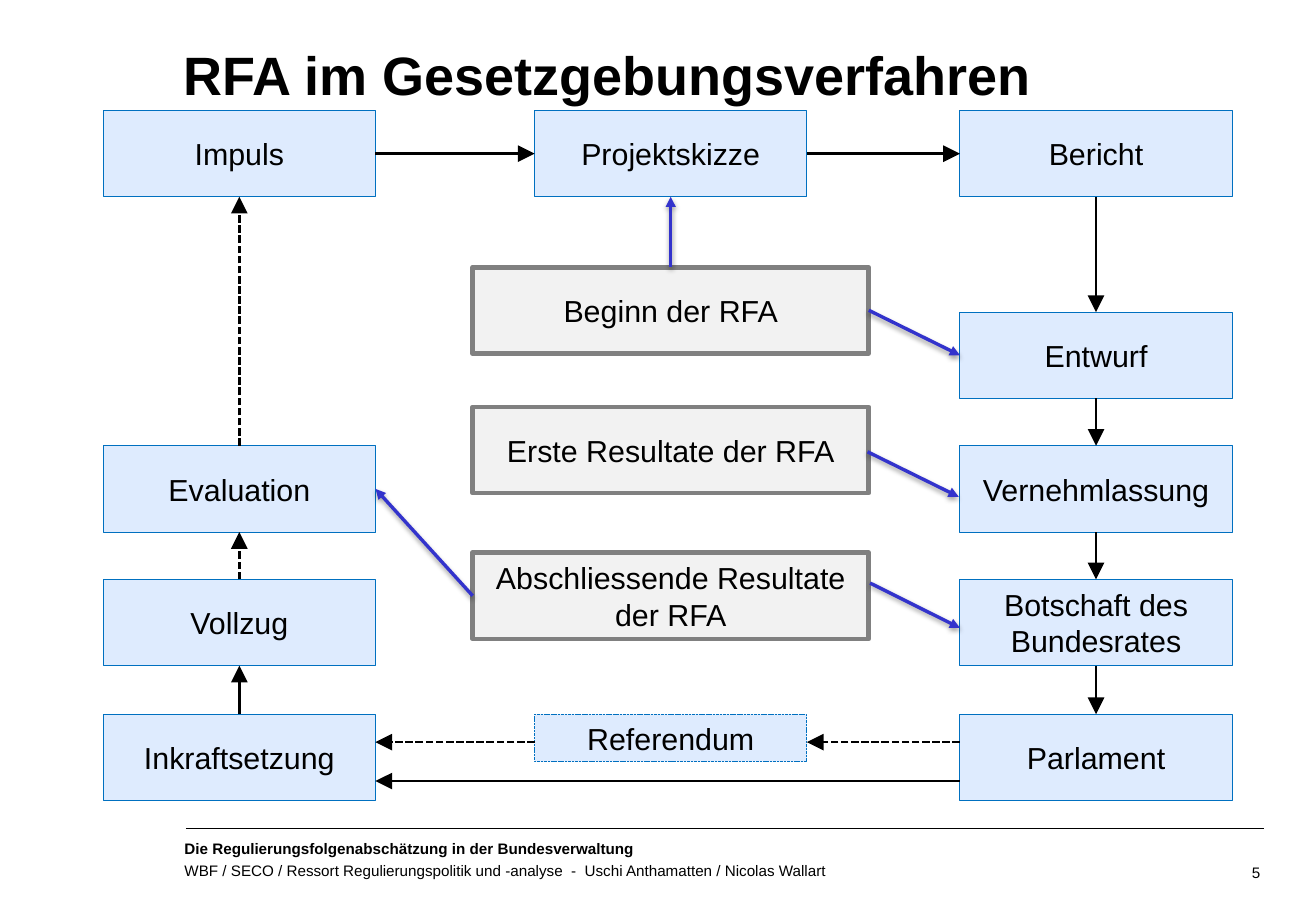
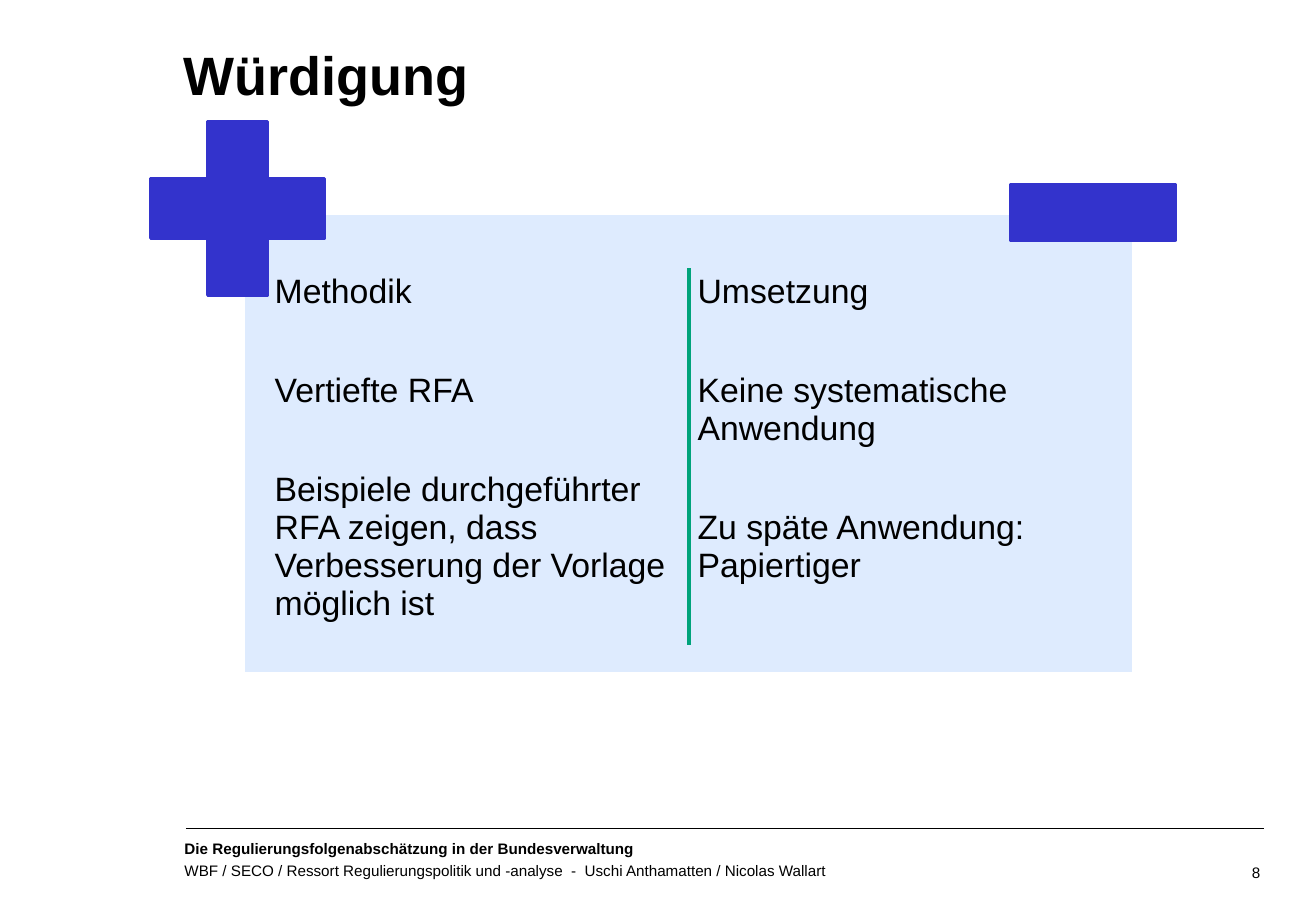
from pptx import Presentation
from pptx.dml.color import RGBColor
from pptx.enum.dml import MSO_LINE
from pptx.enum.shapes import MSO_CONNECTOR, MSO_SHAPE
from pptx.enum.text import MSO_ANCHOR, MSO_AUTO_SIZE, PP_ALIGN
from pptx.oxml import parse_xml
from pptx.oxml.ns import nsdecls, qn
from pptx.util import Pt

PX = 9144  # EMU per px, 100 px to the inch
FONT = "Arial"
BLACK = RGBColor(0, 0, 0)
WHITE = RGBColor(255, 255, 255)
PALE = RGBColor(0xDE, 0xEB, 0xFE)
EDGE = RGBColor(0x00, 0x70, 0xC0)
LIGHT = RGBColor(0xF2, 0xF2, 0xF2)
GREY = RGBColor(0x80, 0x80, 0x80)
BLUE = RGBColor(0x33, 0x33, 0xCC)
TEAL = RGBColor(0x00, 0xA3, 0x7B)
RECT, CROSS = MSO_SHAPE.RECTANGLE, MSO_SHAPE.CROSS
DASH = MSO_LINE.SQUARE_DOT
CENTER, RIGHT = PP_ALIGN.CENTER, PP_ALIGN.RIGHT
MIDDLE, TOP = MSO_ANCHOR.MIDDLE, MSO_ANCHOR.TOP
N, W, S, E = range(4)  # connection sites of a rectangle

FOOT = ["Die Regulierungsfolgenabschätzung in der Bundesverwaltung",
        "WBF / SECO / Ressort Regulierungspolitik und -analyse  -  "
        "Uschi Anthamatten / Nicolas Wallart"]

# Process steps: text, column, row
COLS = (85, 440, 790)
ROWS = (91, 257, 367, 477, 588)
STEP_W, STEP_H = 224, 71
STEPS = [
    ("Impuls", 0, 0), ("Projektskizze", 1, 0), ("Bericht", 2, 0),
    ("Entwurf", 2, 1), ("Vernehmlassung", 2, 2),
    ("Botschaft des Bundesrates", 2, 3), ("Parlament", 2, 4),
    ("Inkraftsetzung", 0, 4), ("Vollzug", 0, 3), ("Evaluation", 0, 2),
]
VOTE = "Referendum"
VOTE_H = 39
# RFA stages: text, top
STAGES = [("Beginn der RFA", 220), ("Erste Resultate der RFA", 335),
          ("Abschliessende Resultate der RFA", 455)]
STAGE_X, STAGE_W = 389, 326

# Arrows between boxes: from, site, to, site, dash
FLOW = [
    ("Impuls", E, "Projektskizze", W, None),
    ("Projektskizze", E, "Bericht", W, None),
    ("Bericht", S, "Entwurf", N, None),
    ("Entwurf", S, "Vernehmlassung", N, None),
    ("Vernehmlassung", S, "Botschaft des Bundesrates", N, None),
    ("Botschaft des Bundesrates", S, "Parlament", N, None),
    ("Inkraftsetzung", N, "Vollzug", S, None),
    ("Vollzug", N, "Evaluation", S, DASH),
    ("Evaluation", N, "Impuls", S, DASH),
]
INPUT = [
    ("Beginn der RFA", N, "Projektskizze", S),
    ("Beginn der RFA", E, "Entwurf", W),
    ("Abschliessende Resultate der RFA", W, "Evaluation", E),
]
# Arrows that meet a box beside its connection sites: ends, dash
FLOW_FREE = [((790, 611, 664, 611), DASH), ((440, 611, 309, 611), DASH),
             ((790, 643, 309, 643), None)]
INPUT_FREE = [(714, 372, 789, 409), (716, 480, 790, 517)]

PROS = ["Methodik", "Vertiefte RFA",
        "Beispiele durchgeführter RFA zeigen, dass Verbesserung der Vorlage "
        "möglich ist"]
CONS = ["Umsetzung", "Keine systematische Anwendung",
        "Zu späte Anwendung: Papiertiger"]

SHADOW = ('<a:outerShdw blurRad="39370" dist="20320" dir="5400000" '
          'rotWithShape="0"><a:srgbClr val="000000"><a:alpha val="38000"/>'
          '</a:srgbClr></a:outerShdw>')


def px(*nums):
    return [n * PX for n in nums]


def place(shape, *box):
    shape.left, shape.top, shape.width, shape.height = px(*box)


def style(para, size, bold=False, align=None):
    font = para.font
    font.name, font.size, font.bold = FONT, Pt(size), bold
    font.color.rgb = BLACK
    if align is not None:
        para.alignment = align


def add_text(slide, box, lines):
    frame = slide.shapes.add_textbox(*px(*box)).text_frame
    frame.word_wrap = True
    frame.text = "\n".join(lines)
    return frame.paragraphs


def add_box(slide, box, fill, edge, width, text="", kind=RECT, dash=None):
    shape = slide.shapes.add_shape(kind, *px(*box))
    shape.shadow.inherit = False
    shape.fill.solid()
    shape.fill.fore_color.rgb = fill
    shape.line.color.rgb = edge
    shape.line.width = Pt(width)
    if dash:
        shape.line.dash_style = dash
    if text:
        frame = shape.text_frame
        frame.text = text
        frame.vertical_anchor = MIDDLE
        style(frame.paragraphs[0], 18, align=CENTER)
    return shape


def add_line(slide, ends, color, width, dash=None, head=None, effect=""):
    """Draw a line; head is the size of the arrowhead at its far end."""
    line = slide.shapes.add_connector(MSO_CONNECTOR.STRAIGHT, *px(*ends))
    line.line.color.rgb = color
    line.line.width = Pt(width)
    if dash:
        line.line.dash_style = dash
    props = line._element.spPr
    if head:
        props.find(qn("a:ln")).append(parse_xml(
            f'<a:tailEnd {nsdecls("a")} type="triangle" w="{head}" len="{head}"/>'))
    props.append(parse_xml(
        f'<a:effectLst {nsdecls("a")}>{effect}</a:effectLst>'))
    return line


def add_flow(slide, ends=(0, 0, 0, 0), dash=None):
    return add_line(slide, ends, BLACK, 1.5, dash, "lg")


def add_input(slide, ends=(0, 0, 0, 0)):
    return add_line(slide, ends, BLUE, 2, None, "med", SHADOW)


def glue(line, start, out, end, into):
    line.begin_connect(start, out)
    line.end_connect(end, into)


def add_slide(deck, layout, title, number):
    """Add a slide with the shared title, rule, footer and number."""
    slide = deck.slides.add_slide(deck.slide_layouts[layout])
    head = slide.shapes.title
    place(head, 141, 27, 899, 73)
    frame = head.text_frame
    frame.text = title
    frame.auto_size = MSO_AUTO_SIZE.NONE
    frame.vertical_anchor = MIDDLE
    frame.margin_bottom = 10 * PX
    style(frame.paragraphs[0], 32, True, PP_ALIGN.LEFT)

    add_line(slide, (153, 682, 1040, 682), BLACK, 0.75)
    first, second = add_text(slide, (142, 689, 636, 41), FOOT)
    style(first, 9, True)
    style(second, 9)
    first.line_spacing = second.line_spacing = 0.8
    second.space_before = Pt(4.5)
    style(add_text(slide, (786, 706, 261, 35), [number])[0], 9, align=RIGHT)
    return slide


def fill_list(holder, left, items):
    place(holder, left, 221, 340, 324)
    frame = holder.text_frame
    frame.text = "\n".join(items)
    frame.auto_size = MSO_AUTO_SIZE.NONE
    frame.vertical_anchor = TOP
    frame.margin_left = frame.margin_right = 4 * PX
    frame.margin_top = frame.margin_bottom = 4 * PX
    for para in frame.paragraphs:
        props = para._p.get_or_add_pPr()
        props.set("marL", "0")
        props.set("indent", "0")
        props.append(parse_xml(f'<a:buNone {nsdecls("a")}/>'))
        para.line_spacing = 0.94
        para.space_before = Pt(0)
        para.space_after = Pt(36)
        style(para, 20)


def build_process(deck):
    slide = add_slide(deck, 5, "RFA im Gesetzgebungsverfahren", "5")
    boxes = {}
    for text, col, row in STEPS:
        box = (COLS[col], ROWS[row], STEP_W, STEP_H)
        boxes[text] = add_box(slide, box, PALE, EDGE, 0.5, text)
    add_box(slide, (COLS[1], ROWS[-1], STEP_W, VOTE_H), PALE, EDGE, 0.5, VOTE,
            dash=DASH)
    for text, top in STAGES:
        box = (STAGE_X, top, STAGE_W, STEP_H)
        boxes[text] = add_box(slide, box, LIGHT, GREY, 2.75, text)

    for start, out, end, into, dash in FLOW:
        glue(add_flow(slide, dash=dash), boxes[start], out, boxes[end], into)
    for ends, dash in FLOW_FREE:
        add_flow(slide, ends, dash)
    for start, out, end, into in INPUT:
        glue(add_input(slide), boxes[start], out, boxes[end], into)
    for ends in INPUT_FREE:
        add_input(slide, ends)


def build_review(deck):
    slide = add_slide(deck, 3, "Würdigung", "8")
    panel = add_box(slide, (200, 176, 733, 379), PALE, WHITE, 2)
    slide.shapes._spTree.insert(2, panel._element)  # behind the lists
    fill_list(slide.placeholders[1], 222, PROS)
    fill_list(slide.placeholders[2], 570, CONS)
    plus = add_box(slide, (124, 100, 143, 143), BLUE, BLUE, 2, kind=CROSS)
    plus.adjustments[0] = 0.328
    add_box(slide, (832, 152, 135, 46), BLUE, BLUE, 2)
    add_line(slide, (567, 221, 567, 531), TEAL, 2)


def main():
    deck = Presentation()
    deck.slide_width, deck.slide_height = px(1083, 750)
    build_process(deck)
    build_review(deck)
    deck.save("out.pptx")


if __name__ == "__main__":
    main()
